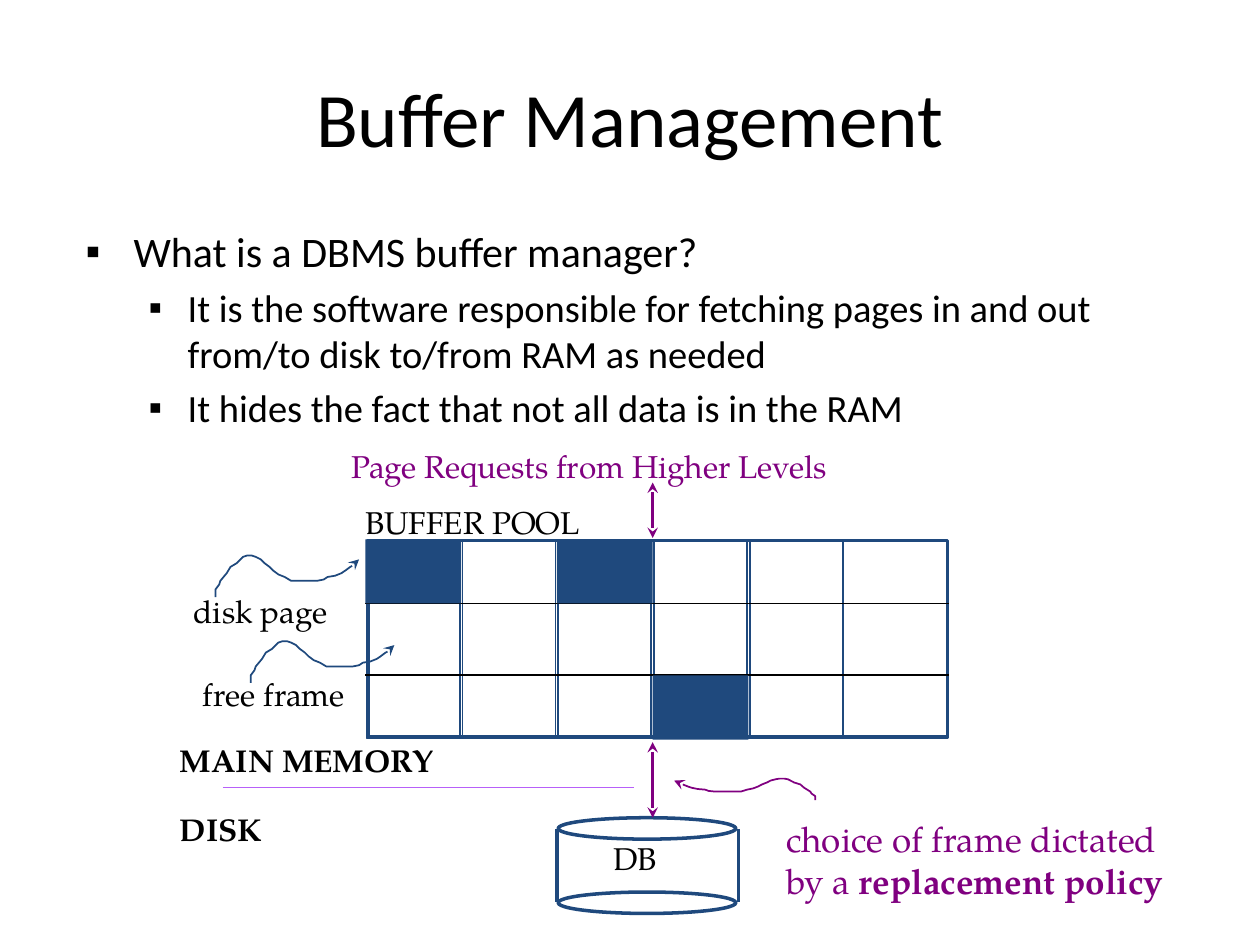
from lxml.etree import SubElement
from pptx import Presentation
from pptx.dml.color import RGBColor
from pptx.enum.shapes import MSO_CONNECTOR as Link, MSO_SHAPE as Kind
from pptx.oxml.ns import qn
from pptx.util import Pt

PX = 9144
NAVY, BLACK, PLUM, LILAC = "1F497D", "000000", "800080", "B760F9"
SERIF = "TeX Gyre Pagella"
WAVE = [(0, 33), (0, 27), (3, 23), (4, 20), (9, 14), (12, 9), (17, 6),
        (22, 1), (25, 0), (29, 0), (32, 1), (36, 3), (39, 6), (43, 9),
        (46, 12), (50, 15), (55, 17), (60, 20), (63, 20), (81, 20),
        (86, 19), (89, 17), (95, 16), (100, 14), (103, 12), (107, 9),
        (111, 7), (114, 3)]


def color(code):
    return RGBColor.from_string(code)


def emu(*nums):
    return [round(num * PX) for num in nums]


def style(run, size, font, tint=BLACK, bold=False):
    run.font.size = Pt(size)
    run.font.name = font
    run.font.bold = bold
    run.font.color.rgb = color(tint)


def tip(shape, *ends):
    for end in ends:
        SubElement(shape.line._get_or_add_ln(), qn(f"a:{end}"), type="stealth")


def edge(shape, tint, width):
    shape.line.color.rgb = color(tint)
    shape.line.width = Pt(width)


def outline(shape, tint, width):
    shape.shadow.inherit = False
    shape.fill.background()
    edge(shape, tint, width)


def form(parts, kind, box, tint, width):
    outline(parts.add_shape(kind, *emu(*box)), tint, width)


def block(parts, box, tint):
    shape = parts.add_shape(Kind.RECTANGLE, *emu(*box))
    shape.shadow.inherit = False
    shape.fill.solid()
    shape.fill.fore_color.rgb = color(tint)
    shape.line.fill.background()


def rule(parts, ends, tint, width, *tips):
    line = parts.add_connector(Link.STRAIGHT, *emu(*ends))
    edge(line, tint, width)
    tip(line, *tips)
    SubElement(line._element.spPr, qn("a:effectLst"))


def label(parts, box, text, size=18, tint=BLACK, bold=False):
    frame = parts.add_textbox(*emu(*box)).text_frame
    frame.word_wrap = True
    frame.margin_right = 0
    frame.text = text
    for para in frame.paragraphs:
        for run in para.runs:
            style(run, size, SERIF, tint, bold)
    return frame


def curve(parts, box, tint, flip=False):
    left, top, width, height = box
    dots = [emu(left + (114 - x if flip else x) * width / 114,
                top + y * height / 33) for x, y in WAVE]
    pen = parts.build_freeform(*dots[0])
    pen.add_line_segments(dots[1:], close=False)
    shape = pen.convert_to_shape()
    outline(shape, tint, 1)
    tip(shape, "tailEnd")


def place(shape, box):
    shape.left, shape.top, shape.width, shape.height = emu(*box)


def title(shape, box):
    place(shape, box)
    shape.text_frame.text = "Buffer Management"
    style(shape.text_frame.paragraphs[0].runs[0], 44, "Calibri")


def points(shape, box):
    place(shape, box)
    frame = shape.text_frame
    rows = [
        (0, "What is a DBMS buffer manager?"),
        (1, "It is the software responsible for fetching pages in and out "
            "from/to disk to/from RAM as needed"),
        (1, "It hides the fact that not all data is in the RAM"),
    ]
    frame.text = "\n".join(text for _, text in rows)
    for para, (level, _) in zip(frame.paragraphs, rows):
        para.level = level
        style(para.runs[0], 22 if level else 24, "Calibri")
        inset, hang = emu(*((81, 31) if level else (38, 38)))
        props = para._p.get_or_add_pPr()
        props.set("marL", str(inset))
        props.set("indent", str(-hang))
        SubElement(props, qn("a:buChar"), char="▪")


def pool(parts, box):
    left, top, width, height = box
    step = 76
    rows = [0, 51, 108]
    group = parts.add_group_shape().shapes
    form(group, Kind.RECTANGLE,
         (left + 2, top + 1, width - 3, height - 2), NAVY, 2)
    for col in range(5):
        form(group, Kind.RECTANGLE,
             (left + 1 + col * step, top + 1, step - 2, height - 1), NAVY, 1)
    for row in rows[1:]:
        rule(group, (left, top + row, left + width, top + row), BLACK, 1)
    for col, row in [(0, 0), (2, 0), (3, 2)]:
        block(group, (left + col * step, top + rows[row], step, 51), NAVY)


def disk(parts, box):
    left, top, width, height = box
    lid = 17
    group = parts.add_group_shape().shapes
    for y in (top, top + height - lid):
        form(group, Kind.OVAL, (left + 1, y, width - 3, lid), NAVY, 2)
    for x in (left, left + width):
        rule(group, (x, top + 9, x, top + height - 9), NAVY, 2)
    label(group, (left + 35, top + 12, 71, 50), "DB")


def memory(parts, box):
    left, top, width, height = box
    rule(parts, (left + 44, top + 42, left + width, top + 42), LILAC, 1)
    label(parts, (left, top, 240, 40), "MAIN MEMORY", bold=True)
    label(parts, (left, top + height - 40, 120, 40), "DISK", bold=True)


def callout(parts, box, text, shift):
    left, top, width, height = box
    curve(parts, (left, top, 114, 33), NAVY)
    label(parts, (left + shift, top + height - 40, width, 40), text)


def policy(parts, box):
    left, top, width, height = box
    curve(parts, (left, top, 112, 17), PLUM, flip=True)
    frame = label(parts, (left + 79, top + 26, width - 79, height - 26),
                  "choice of frame dictated\nby a ", 20, PLUM)
    run = frame.paragraphs[1].add_run()
    run.text = "replacement policy"
    style(run, 20, SERIF, PLUM, True)


def flow(parts, x, top, base):
    rule(parts, (x, top, x, base), PLUM, 2, "headEnd", "tailEnd")


def main():
    deck = Presentation()
    deck.slide_width, deck.slide_height = emu(1000, 750)
    slide = deck.slides.add_slide(deck.slide_layouts[1])
    parts = slide.shapes
    title(parts.title, (50, 30, 900, 125))
    points(slide.placeholders[1], (58, 174, 900, 560))
    pool(parts, (290, 428, 463, 158))
    disk(parts, (442, 649, 144, 76))
    memory(parts, (133, 583, 370, 95))
    callout(parts, (171, 441, 140, 64), "disk page", -27)
    callout(parts, (199, 509, 140, 62), "free frame", -48)
    flow(parts, 518, 383, 427)
    label(parts, (269, 350, 528, 50), "Page Requests from Higher Levels",
          tint=PLUM)
    label(parts, (280, 394, 200, 40), "BUFFER POOL")
    policy(parts, (535, 618, 412, 103))
    flow(parts, 518, 589, 649)
    deck.save("out.pptx")


if __name__ == "__main__":
    main()
